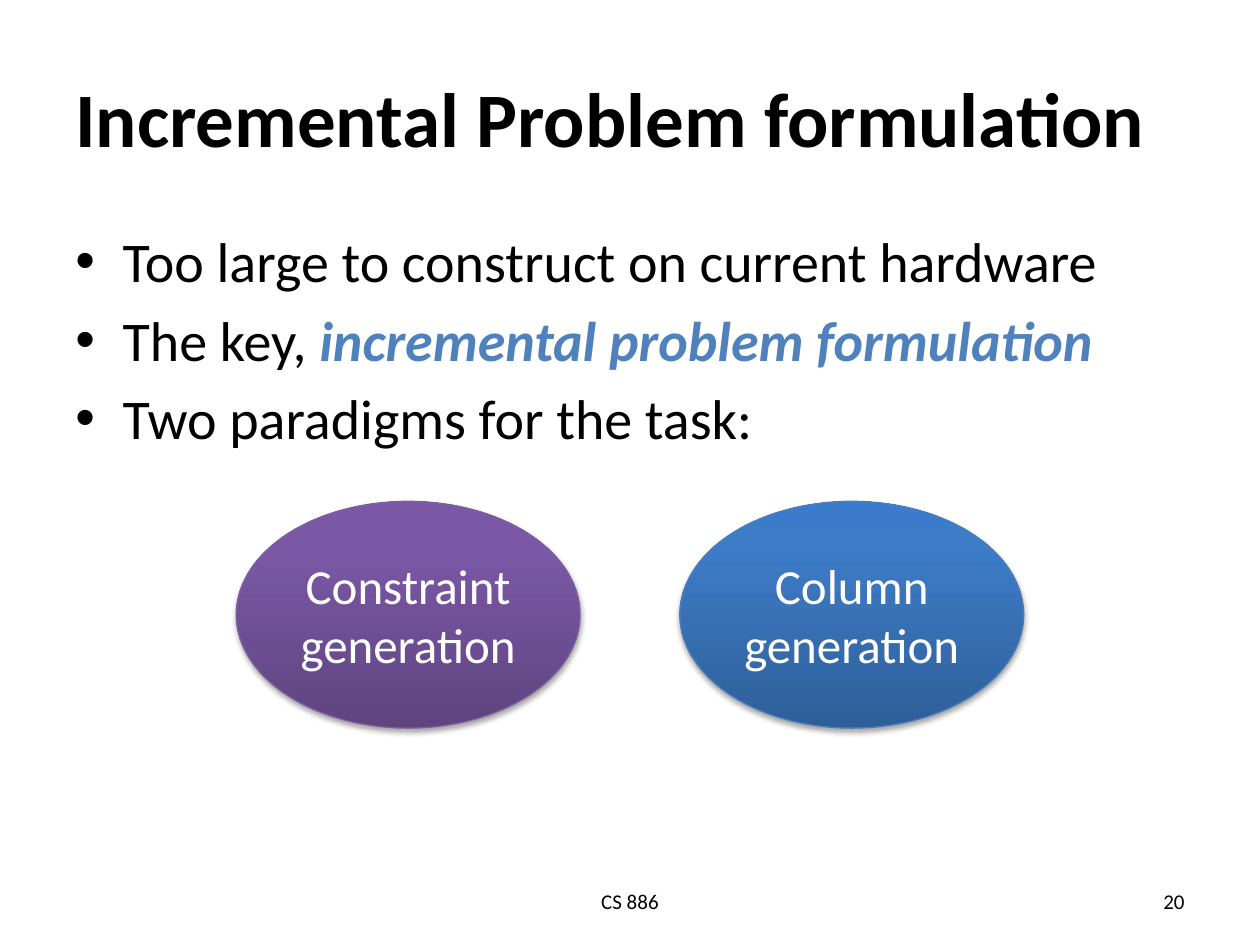
from dataclasses import dataclass

import pptx
import pptx.dml.color
import pptx.enum.shapes
import pptx.enum.text
import pptx.oxml
import pptx.oxml.ns
import pptx.util
from lxml import etree

Pt = pptx.util.Pt
RGB = pptx.dml.color.RGBColor.from_string
ALIGN = pptx.enum.text.PP_ALIGN
ANCHOR = pptx.enum.text.MSO_ANCHOR
qn = pptx.oxml.ns.qn


@dataclass(frozen=True)
class Theme:
    font: str = "Calibri"
    text: str = "000000"
    accent: str = "4F81BD"
    on_fill: str = "FFFFFF"
    title: float = 44
    body: float = 32
    ellipse: float = 28
    footer: float = 12
    # Gradient stops run from the bottom of the ellipse to its top.
    purple: tuple = ((0, "5F4480"), (80, "7B58A6"), (100, "7C57A8"))
    purple_line: str = "7D60A0"
    blue: tuple = ((0, "2F5F99"), (80, "3D7CC7"), (100, "3A7CCB"))
    blue_line: str = "4B7EBC"


THEME = Theme()


def add_span(para, text, *, size, color=THEME.text, bold=False, italic=False):
    span = para.add_run()
    span.text = text
    font = span.font
    font.name, font.size, font.bold, font.italic = THEME.font, Pt(size), bold, italic
    font.color.rgb = RGB(color)


def add_text_box(page, box, anchor=ANCHOR.MIDDLE):
    frame = page.shapes.add_textbox(*map(Pt, box)).text_frame
    frame.word_wrap = True
    frame.vertical_anchor = anchor
    return frame


def add_line(page, box, text, *, size, align=ALIGN.LEFT, bold=False):
    """Place one line of text, vertically centred in its box."""
    para = add_text_box(page, box).paragraphs[0]
    para.alignment = align
    add_span(para, text, size=size, bold=bold)


def set_bullet(para, indent=27, space_percent=20):
    properties = para._p.get_or_add_pPr()
    properties.set("marL", str(Pt(indent)))
    properties.set("indent", str(-Pt(indent)))
    before = etree.SubElement(properties, qn("a:spcBef"))
    etree.SubElement(before, qn("a:spcPct"), val=str(space_percent * 1000))
    etree.SubElement(properties, qn("a:buFont"), typeface="Arial")
    etree.SubElement(properties, qn("a:buChar"), char="•")


def add_bullets(page, box, items):
    """Each item is a list of (text, format) pairs."""
    frame = add_text_box(page, box, ANCHOR.TOP)
    for index, item in enumerate(items):
        para = frame.add_paragraph() if index else frame.paragraphs[0]
        set_bullet(para)
        for text, style in item:
            add_span(para, text, size=THEME.body, **style)


def set_gradient(shape, stops):
    shape.fill.gradient()
    shape.fill.gradient_angle = 90
    stop_list = shape._element.spPr.find(".//" + qn("a:gsLst"))
    for stop in list(stop_list):
        stop_list.remove(stop)
    for position, color in stops:
        stop = etree.SubElement(stop_list, qn("a:gs"), pos=str(position * 1000))
        etree.SubElement(stop, qn("a:srgbClr"), val=color)


def set_shadow(shape, blur=3.1, distance=1.8, opacity=35):
    shape.shadow.inherit = False
    effects = shape._element.spPr.find(qn("a:effectLst"))
    shadow = etree.SubElement(
        effects, qn("a:outerShdw"), blurRad=str(Pt(blur)), dist=str(Pt(distance)),
        dir=str(90 * 60000), rotWithShape="0")
    color = etree.SubElement(shadow, qn("a:srgbClr"), val="000000")
    etree.SubElement(color, qn("a:alpha"), val=str(opacity * 1000))


def add_ellipse(page, box, lines, stops, line_color):
    shape = page.shapes.add_shape(
        pptx.enum.shapes.MSO_SHAPE.OVAL, *map(Pt, box))
    set_gradient(shape, stops)
    shape.line.color.rgb = RGB(line_color)
    shape.line.width = Pt(0.75)
    set_shadow(shape)
    frame = shape.text_frame
    frame.word_wrap = True
    frame.vertical_anchor = ANCHOR.MIDDLE
    for index, text in enumerate(lines):
        para = frame.add_paragraph() if index else frame.paragraphs[0]
        para.alignment = ALIGN.CENTER
        add_span(para, text, size=THEME.ellipse, color=THEME.on_fill)


def add_paradigms(page, box, paradigms, gap=57):
    """Share the box's width equally between the ellipses."""
    left, top, width, height = box
    each = (width - gap * (len(paradigms) - 1)) / len(paradigms)
    for index, paradigm in enumerate(paradigms):
        add_ellipse(page, (left + index * (each + gap), top, each, height), *paradigm)


def add_footer(page, box, course, number):
    left, top, width, height = box
    course_width, number_width = 228, 168
    add_line(page, (left + (width - course_width) / 2, top, course_width, height),
             course, size=THEME.footer, align=ALIGN.CENTER)
    add_line(page, (left + width - number_width, top, number_width, height),
             number, size=THEME.footer, align=ALIGN.RIGHT)


def main():
    deck = pptx.Presentation()
    deck.slide_width, deck.slide_height = Pt(720), Pt(540)
    page = deck.slides.add_slide(deck.slide_layouts[6])
    left, width = 36, 648

    add_line(page, (left, 21.6, width, 90), "Incremental Problem formulation",
             size=THEME.title, bold=True)
    emphasis = dict(color=THEME.accent, bold=True, italic=True)
    add_bullets(page, (left, 126, width, 356.4), [
        [("Too large to construct on current hardware", {})],
        [("The key, ", {}), ("incremental problem formulation", emphasis)],
        [("Two paradigms for the task:", {})],
    ])
    add_footer(page, (left, 500.5, width, 28.75), "CS 886", "20")
    add_paradigms(page, (135, 286.5, 450, 129.6), [
        (["Constraint generation"], THEME.purple, THEME.purple_line),
        (["Column", "generation"], THEME.blue, THEME.blue_line),
    ])
    deck.save("out.pptx")


if __name__ == "__main__":
    main()
